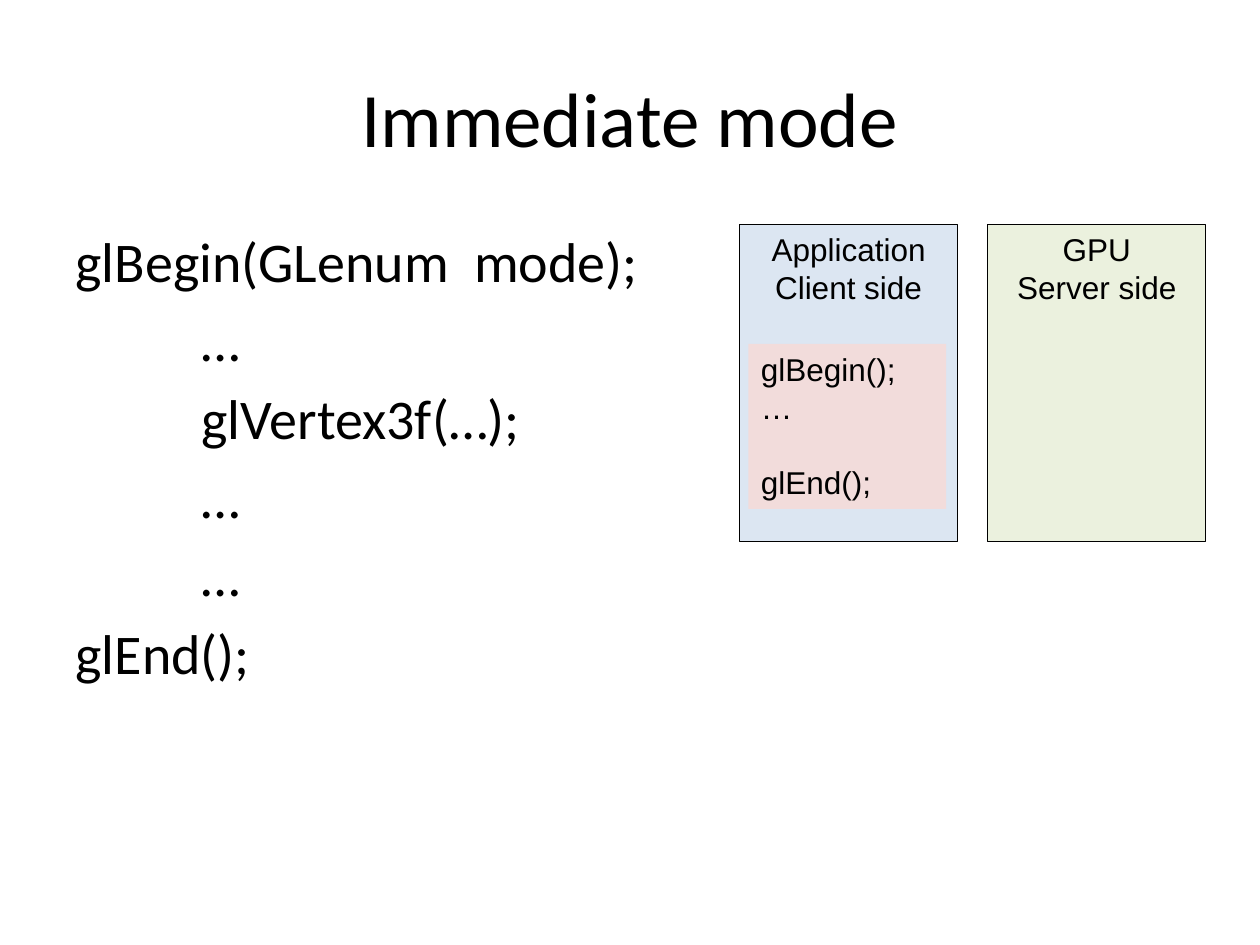
from pptx import Presentation
from pptx.dml.color import RGBColor
from pptx.enum.shapes import MSO_SHAPE
from pptx.enum.text import MSO_ANCHOR, PP_ALIGN
from pptx.util import Inches, Pt

COLORS = {"ink": "000000", "client": "DCE6F2", "server": "EBF1DE", "code": "F2DCDB"}
WIDTH, HEIGHT = 10, 7.5
PANEL_LEFT, PANEL_TOP, PANEL_WIDTH, PANEL_HEIGHT = 5.87, 1.78, 1.73, 2.52
PANEL_STEP = 1.97


def color(key):
    """Return the named colour."""
    return RGBColor.from_string(COLORS[key])


def place(shape, left, top, width, height):
    """Move and size a shape in inches."""
    shape.left, shape.top = Inches(left), Inches(top)
    shape.width, shape.height = Inches(width), Inches(height)


def write_lines(frame, lines, font, size, align):
    """Write each line as a paragraph and return the paragraphs."""
    for index, line in enumerate(lines):
        paragraph = frame.add_paragraph() if index else frame.paragraphs[0]
        paragraph.alignment = align
        run = paragraph.add_run()
        run.text = line
        run.font.name, run.font.size = font, Pt(size)
        run.font.color.rgb = color("ink")
    return frame.paragraphs


def add_heading(slide, text):
    """Fill the title placeholder."""
    heading = slide.shapes.title
    place(heading, 0.5, 0.3, WIDTH - 1, 1.25)
    heading.text_frame.vertical_anchor = MSO_ANCHOR.MIDDLE
    write_lines(heading.text_frame, [text], "Calibri", 44, PP_ALIGN.CENTER)


def add_listing(slide, lines):
    """Fill the body placeholder with (level, text) lines without bullets."""
    listing = slide.placeholders[1]
    place(listing, 0.5, 1.75, WIDTH - 1, 4.95)
    texts = [text for _, text in lines]
    paragraphs = write_lines(listing.text_frame, texts, "Calibri", 32, PP_ALIGN.LEFT)
    for paragraph, (level, _) in zip(paragraphs, lines):
        properties = paragraph._p.get_or_add_pPr()
        properties.set("marL", str(Inches(level)))
        properties.set("indent", "0")
        properties.insert_element_before(
            properties.makeelement(
                "{http://schemas.openxmlformats.org/drawingml/2006/main}buNone"
            ),
            "a:tabLst", "a:defRPr", "a:extLst",
        )


def add_box(slide, left, top, width, height, fill, lines, align, outlined=True):
    """Add a filled rectangle with text at its top and return its paragraphs."""
    box = slide.shapes.add_shape(MSO_SHAPE.RECTANGLE, 0, 0, 0, 0)
    place(box, left, top, width, height)
    box.shadow.inherit = False
    box.fill.solid()
    box.fill.fore_color.rgb = color(fill)
    if outlined:
        box.line.color.rgb = color("ink")
        box.line.width = Pt(0.75)
    else:
        box.line.fill.background()
    box.text_frame.word_wrap = True
    box.text_frame.vertical_anchor = MSO_ANCHOR.TOP
    return write_lines(box.text_frame, lines, "Arial", 18, align)


def main():
    """Build the slide."""
    presentation = Presentation()
    presentation.slide_width, presentation.slide_height = Inches(WIDTH), Inches(HEIGHT)
    slide = presentation.slides.add_slide(presentation.slide_layouts[1])
    add_heading(slide, "Immediate mode")
    add_listing(slide, [
        (0, "glBegin(GLenum  mode);"),
        (1, "…"),
        (1, "glVertex3f(…);"),
        (1, "…"),
        (1, "…"),
        (0, "glEnd();"),
    ])
    sides = [
        ("client", ["Application", "Client side"]),
        ("server", ["GPU", "Server side"]),
    ]
    for column, (side, label) in enumerate(sides):
        add_box(slide, PANEL_LEFT + column * PANEL_STEP, PANEL_TOP, PANEL_WIDTH,
                PANEL_HEIGHT, side, label, PP_ALIGN.CENTER)
    calls = add_box(slide, PANEL_LEFT + 0.07, PANEL_TOP + 0.95, 1.57, 1.31, "code",
                    ["glBegin();", "…", "glEnd();"], PP_ALIGN.LEFT, outlined=False)
    calls[-1].space_before = Pt(21)
    presentation.save("out.pptx")


if __name__ == "__main__":
    main()
